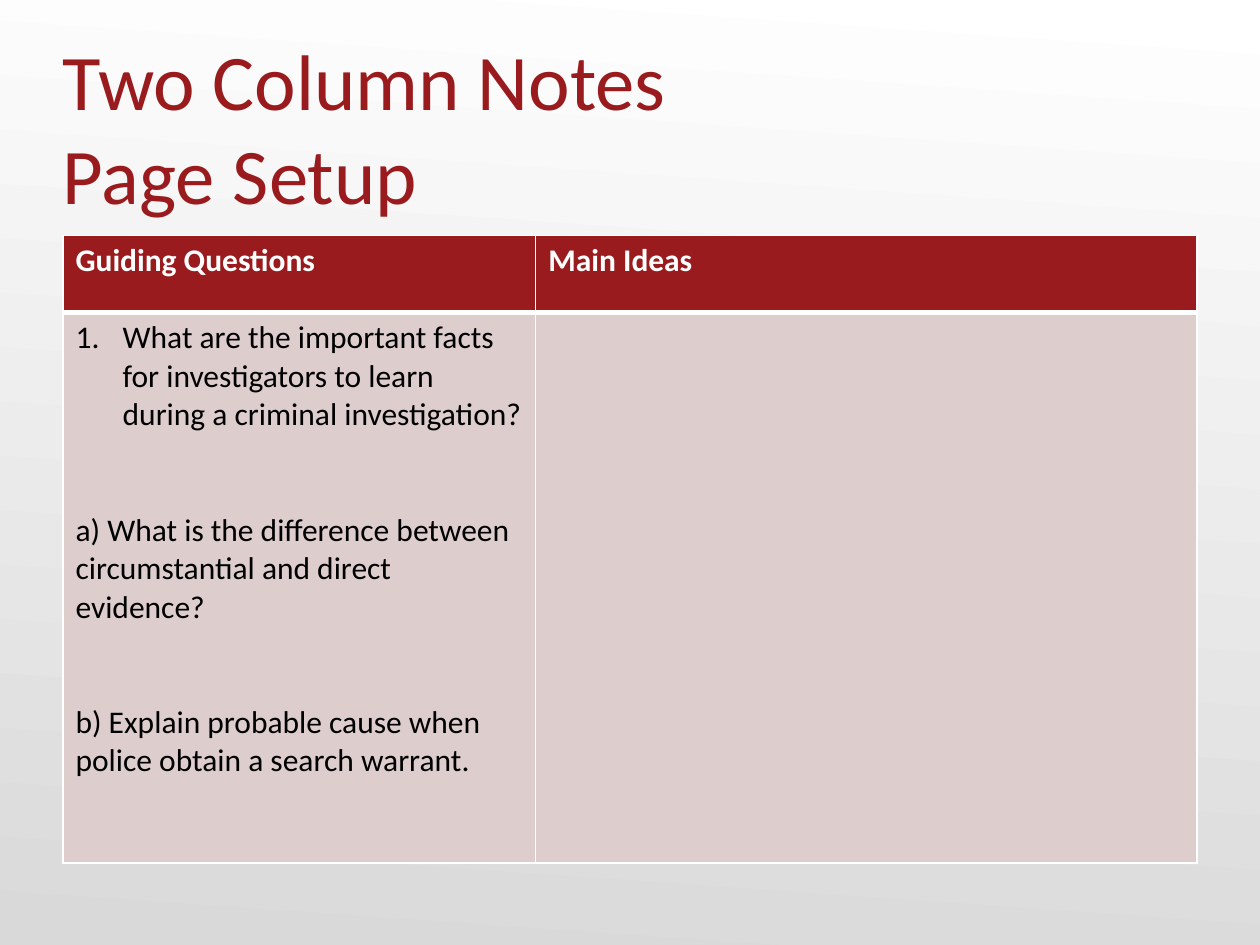
from pptx import Presentation
from pptx.dml.color import RGBColor
from pptx.enum.text import MSO_ANCHOR
from pptx.oxml.ns import qn
from pptx.util import Cm, Pt
from lxml.etree import SubElement

RED = RGBColor(0x99, 0x1B, 0x1E)
PINK = RGBColor(0xDE, 0xCD, 0xCD)
WHITE = RGBColor(0xFF, 0xFF, 0xFF)
GREY = RGBColor(0xD9, 0xD9, 0xD9)
BLACK = RGBColor(0, 0, 0)
FONT = "Calibri"

HEADINGS = ["Guiding Questions", "Main Ideas"]
QUESTIONS = [
    "What are the important facts for investigators to learn during a criminal investigation?",
    "a) What is the difference between circumstantial and direct evidence?",
    "b) Explain probable cause when police obtain a search warrant.",
]


def add_run(p, text, size, color, bold=False):
    r = p.add_run()
    r.text = text
    r.font.name = FONT
    r.font.size = Pt(size)
    r.font.color.rgb = color
    r.font.bold = bold


def set_borders(cell, **widths):
    """Draw white borders; widths are points keyed by side: L, R, T, B."""
    tc_pr = cell._tc.get_or_add_tcPr()
    for side, width in widths.items():
        ln = SubElement(tc_pr, qn(f"a:ln{side}"), w=str(Pt(width)))
        fill = SubElement(ln, qn("a:solidFill"))
        SubElement(fill, qn("a:srgbClr"), val=str(WHITE))


prs = Presentation()
prs.slide_width, prs.slide_height = Cm(25.4), Cm(19.05)
s = prs.slides.add_slide(prs.slide_layouts[6])

# Background
bg = s.background.fill
bg.gradient()
bg.gradient_angle = 266
for stop, color, position in zip(bg.gradient_stops, (WHITE, GREY), (0, 1)):
    stop.color.rgb = color
    stop.position = position

# Title
title = s.shapes.add_textbox(Cm(1.27), Cm(1.96), Cm(22.86), Cm(2.49))
tf = title.text_frame
tf.word_wrap = True
tf.vertical_anchor = MSO_ANCHOR.BOTTOM
tf.margin_left = tf.margin_right = tf.margin_bottom = 0
p = tf.paragraphs[0]
add_run(p, "Two Column Notes", 45, RED)
p.add_line_break()
add_run(p, "Page Setup", 45, RED)

# Notes table
table = s.shapes.add_table(2, 2, Cm(1.27), Cm(4.75), Cm(22.86), Cm(12.65)).table
for column, width in zip(table.columns, (9.53, 13.33)):
    column.width = Cm(width)
for row, height in zip(table.rows, (1.55, 11.1)):
    row.height = Cm(height)

for col, heading in enumerate(HEADINGS):
    head, body = table.cell(0, col), table.cell(1, col)
    set_borders(head, L=1, R=1, T=1, B=3)
    set_borders(body, L=1, R=1, T=3, B=1)
    for cell, color in ((head, RED), (body, PINK)):
        cell.fill.solid()
        cell.fill.fore_color.rgb = color
    add_run(head.text_frame.paragraphs[0], heading, 18, WHITE, bold=True)

tf = table.cell(1, 0).text_frame
for i, question in enumerate(QUESTIONS):
    p = tf.add_paragraph() if i else tf.paragraphs[0]
    add_run(p, question, 18, BLACK)
    if i:
        p.space_before = Pt(44)
    else:
        p_pr = p._p.get_or_add_pPr()
        p_pr.set("marL", str(Cm(0.95)))
        p_pr.set("indent", str(-Cm(0.95)))
        SubElement(p_pr, qn("a:buAutoNum"), type="arabicPeriod")

prs.save("out.pptx")
